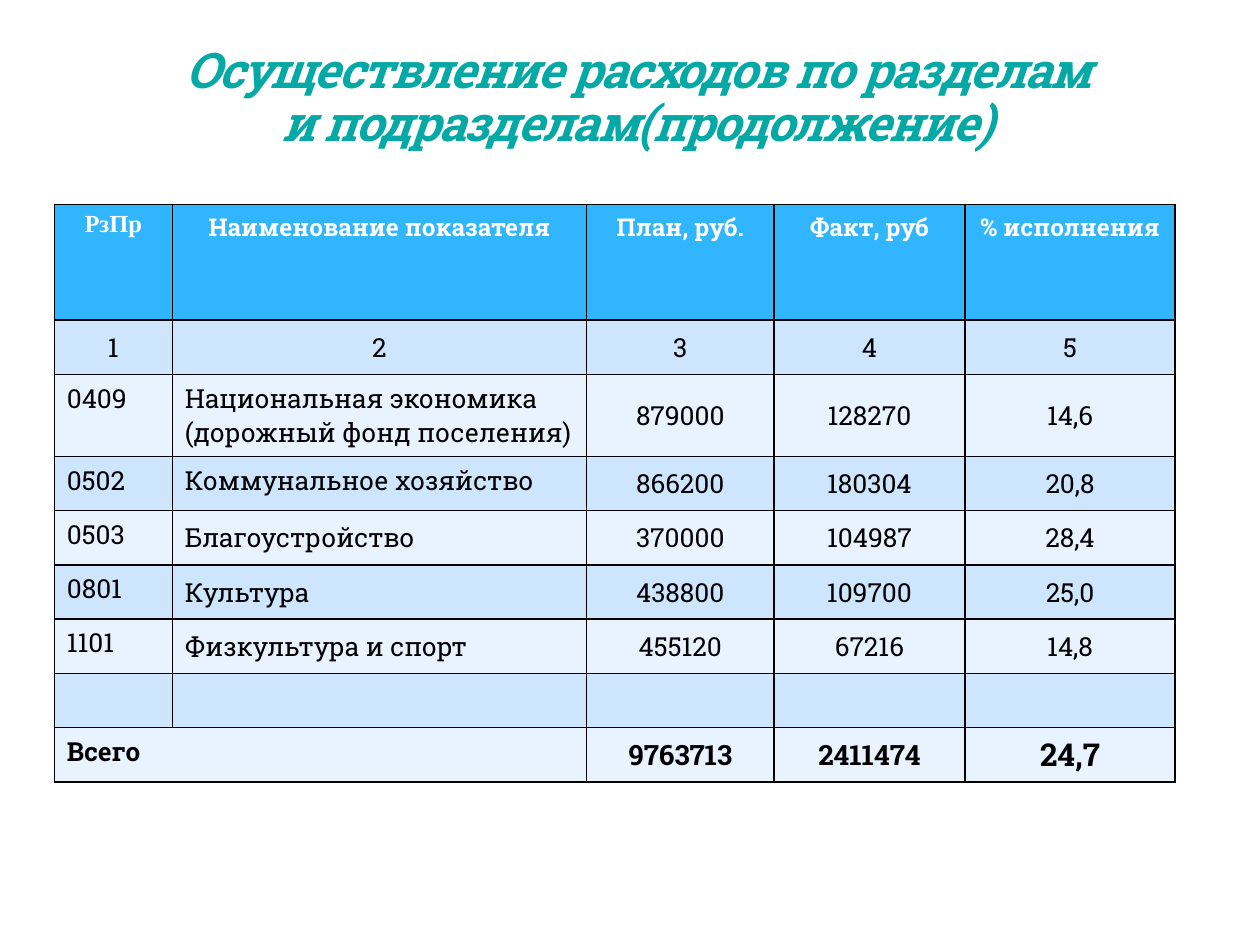
from pptx import Presentation
from pptx.dml.color import RGBColor
from pptx.enum.text import MSO_ANCHOR, MSO_AUTO_SIZE, PP_ALIGN
from pptx.oxml import parse_xml
from pptx.oxml.ns import nsdecls
from pptx.util import Pt

TEAL = RGBColor(0x04, 0xA8, 0xA4)
OUTLINE = RGBColor(0xAF, 0xCC, 0xDE)
HEADER_BLUE = RGBColor(0x31, 0xB6, 0xFD)
BAND_DARK = RGBColor(0xCE, 0xE5, 0xFE)
BAND_LIGHT = RGBColor(0xE8, 0xF3, 0xFF)
BLACK = RGBColor(0, 0, 0)
WHITE = RGBColor(0xFF, 0xFF, 0xFF)
FONT = "Roboto Slab"

TITLE = "Осуществление расходов по разделам и подразделам(продолжение)"
ROWS = [
    ("РзПр", "Наименование показателя", "План, руб.", "Факт, руб", "% исполнения"),
    ("1", "2", "3", "4", "5"),
    ("0409", "Национальная экономика (дорожный фонд поселения)", "879000", "128270", "14,6"),
    ("0502", "Коммунальное хозяйство", "866200", "180304", "20,8"),
    ("0503", "Благоустройство", "370000", "104987", "28,4"),
    ("0801", "Культура", "438800", "109700", "25,0"),
    ("1101", "Физкультура и спорт", "455120", "67216", "14,8"),
    ("", "", "", "", ""),
    ("Всего", "", "9763713", "2411474", "24,7"),
]
COLUMN_WIDTHS = [67.5, 236.7, 107.1, 109.1, 120.2]
ROW_HEIGHTS = [66.2, 31, 46.6] + [31] * 6
HEADER, NUMBERING, TOTAL = 0, 1, len(ROWS) - 1
TOP_ANCHORED_NAMES = (2, 3)


def format_font(font, size, color, bold, name=FONT):
    font.name = name
    font.size = Pt(size)
    font.bold = bold
    font.color.rgb = color


def add_title(slide, left, top, width, height):
    title = slide.shapes.title
    title.left, title.top, title.width, title.height = map(Pt, (left, top, width, height))
    frame = title.text_frame
    frame.text = TITLE
    frame.word_wrap = True
    frame.auto_size = MSO_AUTO_SIZE.NONE
    frame.vertical_anchor = MSO_ANCHOR.BOTTOM
    paragraph = frame.paragraphs[0]
    paragraph.alignment = PP_ALIGN.CENTER
    paragraph.line_spacing = 0.9
    run = paragraph.runs[0]
    format_font(run.font, 28, TEAL, True)
    run.font.italic = True
    # Tight letter spacing and a faint outline
    properties = run.font._element
    properties.set("spc", "-100")
    properties.insert(0, parse_xml(
        f'<a:ln {nsdecls("a")} w="{Pt(0.25)}"><a:solidFill><a:srgbClr val="{OUTLINE}">'
        '<a:alpha val="25000"/></a:srgbClr></a:solidFill></a:ln>'))


def add_borders(cell):
    properties = cell._tc.get_or_add_tcPr()
    for position, side in enumerate(("lnL", "lnR", "lnT", "lnB")):
        properties.insert(position, parse_xml(
            f'<a:{side} {nsdecls("a")} w="{Pt(1)}"><a:solidFill>'
            f'<a:srgbClr val="{BLACK}"/></a:solidFill></a:{side}>'))


def format_cell(cell, row, column):
    cell.fill.solid()
    if row == HEADER:
        cell.fill.fore_color.rgb = HEADER_BLUE
    else:
        cell.fill.fore_color.rgb = BAND_DARK if row % 2 else BAND_LIGHT
    add_borders(cell)

    # Codes and names are left aligned, figures and headings centred
    centred = row <= NUMBERING or column >= 2
    top_anchored = (row == HEADER or (column == 0 and row != NUMBERING)
                    or (column == 1 and row in TOP_ANCHORED_NAMES))
    cell.vertical_anchor = MSO_ANCHOR.TOP if top_anchored else MSO_ANCHOR.MIDDLE
    paragraph = cell.text_frame.paragraphs[0]
    paragraph.alignment = PP_ALIGN.CENTER if centred else PP_ALIGN.LEFT

    size = 14 if row == HEADER else 15
    if row == TOTAL and column >= 2:
        size = 18 if column == 4 else 16
    name = "Times New Roman" if (row, column) == (HEADER, 0) else FONT
    color = WHITE if row == HEADER else BLACK
    for run in paragraph.runs:
        format_font(run.font, size, color, row in (HEADER, TOTAL), name)


def add_expense_table(slide, left, top):
    table = slide.shapes.add_table(
        len(ROWS), len(COLUMN_WIDTHS), Pt(left), Pt(top),
        Pt(sum(COLUMN_WIDTHS)), Pt(sum(ROW_HEIGHTS))).table
    for column, width in zip(table.columns, COLUMN_WIDTHS):
        column.width = Pt(width)
    for row, height in zip(table.rows, ROW_HEIGHTS):
        row.height = Pt(height)
    for row, texts in enumerate(ROWS):
        for column, text in enumerate(texts):
            cell = table.cell(row, column)
            cell.text = text
            format_cell(cell, row, column)
    table.cell(TOTAL, 0).merge(table.cell(TOTAL, 1))


def main():
    presentation = Presentation()
    presentation.slide_width, presentation.slide_height = Pt(720), Pt(540)
    slide = presentation.slides.add_slide(presentation.slide_layouts[5])
    add_expense_table(slide, 31, 116.8)
    add_title(slide, 87.8, 54.7, 553, 36)
    presentation.save("out.pptx")


if __name__ == "__main__":
    main()
